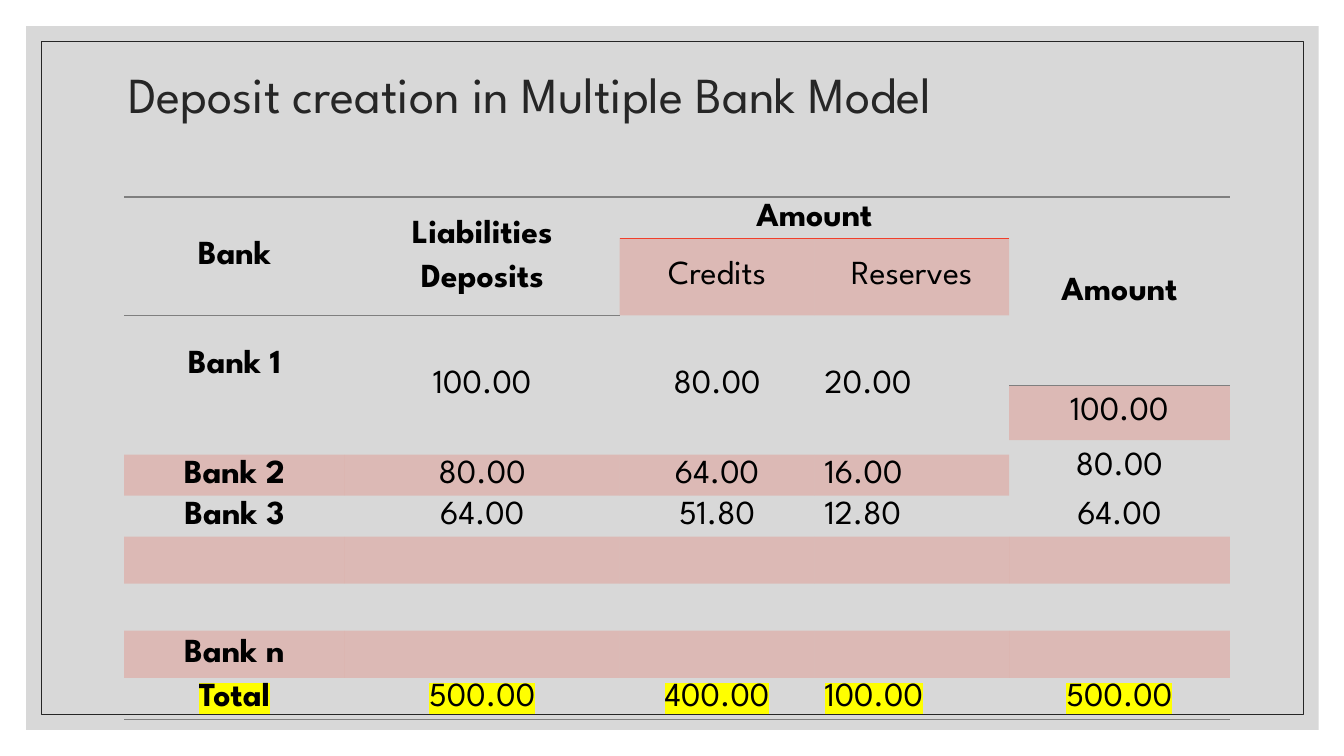
from lxml import etree
from pptx import Presentation
from pptx import util as u
from pptx.dml.color import RGBColor
from pptx.enum import shapes, text
from pptx.oxml import ns

GREY = RGBColor(0xBF, 0xBF, 0xBF)
INK = RGBColor(0x26, 0x26, 0x26)
BLACK = RGBColor(0, 0, 0)
RULE = RGBColor(0x7F, 0x7F, 0x7F)
RED = RGBColor(0xF0, 0x3F, 0x2B)
YELLOW = RGBColor(0xFF, 0xFF, 0)

COLUMNS = [16.43, 20.45, 14.5, 14.47, 16.43]
ROWS = [5.43, 10.2, 9.25, 7.25, 1.9, 5.43, 5.43, 6.23, 6.23, 6.23, 5.5]
CELLS = [
    ["Bank", "Liabilities\nDeposits", "Amount", "", "Amount"],
    ["", "", "Credits", "Reserves", ""],
    ["Bank 1", "100.00", "80.00", "20.00", ""],
    ["", "", "", "", "100.00"],
    ["", "", "", "", "80.00"],
    ["Bank 2", "80.00", "64.00", "16.00", ""],
    ["Bank 3", "64.00", "51.80", "12.80", "64.00"],
    [""] * 5,
    [""] * 5,
    ["Bank n", "", "", "", ""],
    ["Total", "500.00", "400.00", "100.00", "500.00"],
]
MERGES = [(0, 0, 1, 0), (0, 1, 1, 1), (0, 2, 0, 3), (0, 4, 2, 4), (4, 4, 5, 4)]
MERGES += [(2, c, 4, c) for c in range(4)]
TINTED = {1: (2, 3), 3: (4,), 5: range(4), 7: range(5), 9: range(5)}
BORDERS = [
    ("a:lnT", 0, range(5), RULE),
    ("a:lnB", 0, (0, 1, 4), RULE),
    ("a:lnB", 0, (2, 3), RED),
    ("a:lnB", 1, (0, 1), RULE),
    ("a:lnB", 2, (4,), RULE),
    ("a:lnB", 10, range(5), RULE),
]
NO_GRID = "{2D5ABB26-0587-4C30-8999-92F81FD0307C}"


class Deck:
    """Holds the style and current slide; lengths are percentages of its size."""

    font = "League Spartan"

    def __init__(self):
        self.prs = Presentation()
        self.prs.slide_width, self.prs.slide_height = u.Inches(13.33), u.Inches(7.5)
        self.s = self.prs.slides.add_slide(self.prs.slide_layouts[5])

    def x(self, share):
        return int(self.prs.slide_width * share / 100)

    def y(self, share):
        return int(self.prs.slide_height * share / 100)

    def box(self, left, top, width, height):
        return self.x(left), self.y(top), self.x(width), self.y(height)

    def tint(self, fill, color, percent):
        fill.solid()
        fill.fore_color.rgb = color
        clr = fill._xPr.find(".//" + ns.qn("a:srgbClr"))
        etree.SubElement(clr, ns.qn("a:alpha"), val=str(percent * 1000))

    def style(self, p, size, color, bold=False):
        for r in p.runs:
            r.font.name, r.font.size, r.font.bold = self.font, u.Pt(size), bold
            r.font.color.rgb = color

    def highlight(self, p, color):
        for r in p.runs:
            mark = etree.Element(ns.qn("a:highlight"))
            etree.SubElement(mark, ns.qn("a:srgbClr"), val=str(color))
            r._r.rPr.find(ns.qn("a:solidFill")).addnext(mark)

    def rect(self, box, fill=None, line=None):
        sp = self.s.shapes.add_shape(shapes.MSO_SHAPE.RECTANGLE, *self.box(*box))
        sp.shadow.inherit = False
        if fill is not None:
            self.tint(sp.fill, fill, 60)
            sp.line.fill.background()
        else:
            sp.fill.background()
            sp.line.color.rgb = line
            sp.line.width = u.Pt(0.5)

    def title(self, words, box):
        sp = self.s.shapes.title
        self.s.shapes._spTree.append(sp._element)
        sp.left, sp.top, sp.width, sp.height = self.box(*box)
        tf = sp.text_frame
        tf.text = words
        tf.auto_size = text.MSO_AUTO_SIZE.NONE
        tf.vertical_anchor = text.MSO_ANCHOR.MIDDLE
        p = tf.paragraphs[0]
        p.alignment, p.line_spacing = text.PP_ALIGN.LEFT, 0.9
        self.style(p, 36, INK)

    def border(self, cell, side, color):
        tcPr = cell._tc.get_or_add_tcPr()
        lines = [e for e in tcPr if e.tag in (ns.qn("a:lnT"), ns.qn("a:lnB"))]
        ln = etree.Element(ns.qn(side), w=str(u.Pt(1)))
        fill = etree.SubElement(ln, ns.qn("a:solidFill"))
        etree.SubElement(fill, ns.qn("a:srgbClr"), val=str(color))
        tcPr.insert(len(lines), ln)

    def cell(self, cell, words, row, col):
        cell.vertical_anchor = text.MSO_ANCHOR.MIDDLE
        if col in TINTED.get(row, ()):
            self.tint(cell.fill, RED, 20)
        else:
            cell.fill.background()
        if not words:
            return
        heading = row == 0 and col > 0
        if heading:
            cell.margin_left = cell.margin_right = u.Inches(0.07)
            cell.margin_top = cell.margin_bottom = 0
        if words == "Bank 1":
            cell.margin_bottom = u.Inches(0.43)
        cell.text_frame.text = words
        for p in cell.text_frame.paragraphs:
            left = col == 3 and row > 1
            p.alignment = text.PP_ALIGN.LEFT if left else text.PP_ALIGN.CENTER
            if heading:
                p.line_spacing, p.space_after = 1.07, u.Pt(8)
            self.style(p, 24, BLACK, row == 0 or col == 0)
            if row == len(ROWS) - 1:
                self.highlight(p, YELLOW)

    def table(self, left, top):
        box = self.box(left, top, sum(COLUMNS), sum(ROWS))
        tbl = self.s.shapes.add_table(len(ROWS), len(COLUMNS), *box).table
        tbl.first_row = tbl.horz_banding = False
        tbl._tbl.tblPr.find(ns.qn("a:tableStyleId")).text = NO_GRID
        for column, share in zip(tbl.columns, COLUMNS):
            column.width = self.x(share)
        for row, share in zip(tbl.rows, ROWS):
            row.height = self.y(share)
        for r0, c0, r1, c1 in MERGES:
            tbl.cell(r0, c0).merge(tbl.cell(r1, c1))
        for row, line in enumerate(CELLS):
            for col, words in enumerate(line):
                self.cell(tbl.cell(row, col), words, row, col)
        for side, row, cols, color in BORDERS:
            for col in cols:
                self.border(tbl.cell(row, col), side, color)


def main():
    deck = Deck()
    deck.rect((1.95, 3.47, 96.17, 93.07), fill=GREY)
    deck.rect((3.08, 5.47, 93.92, 89.07), line=INK)
    deck.title("Deposit creation in Multiple Bank Model", (8.78, 9.33, 82.52, 7.07))
    deck.table(9.23, 26.07)
    deck.prs.save("out.pptx")


if __name__ == "__main__":
    main()
